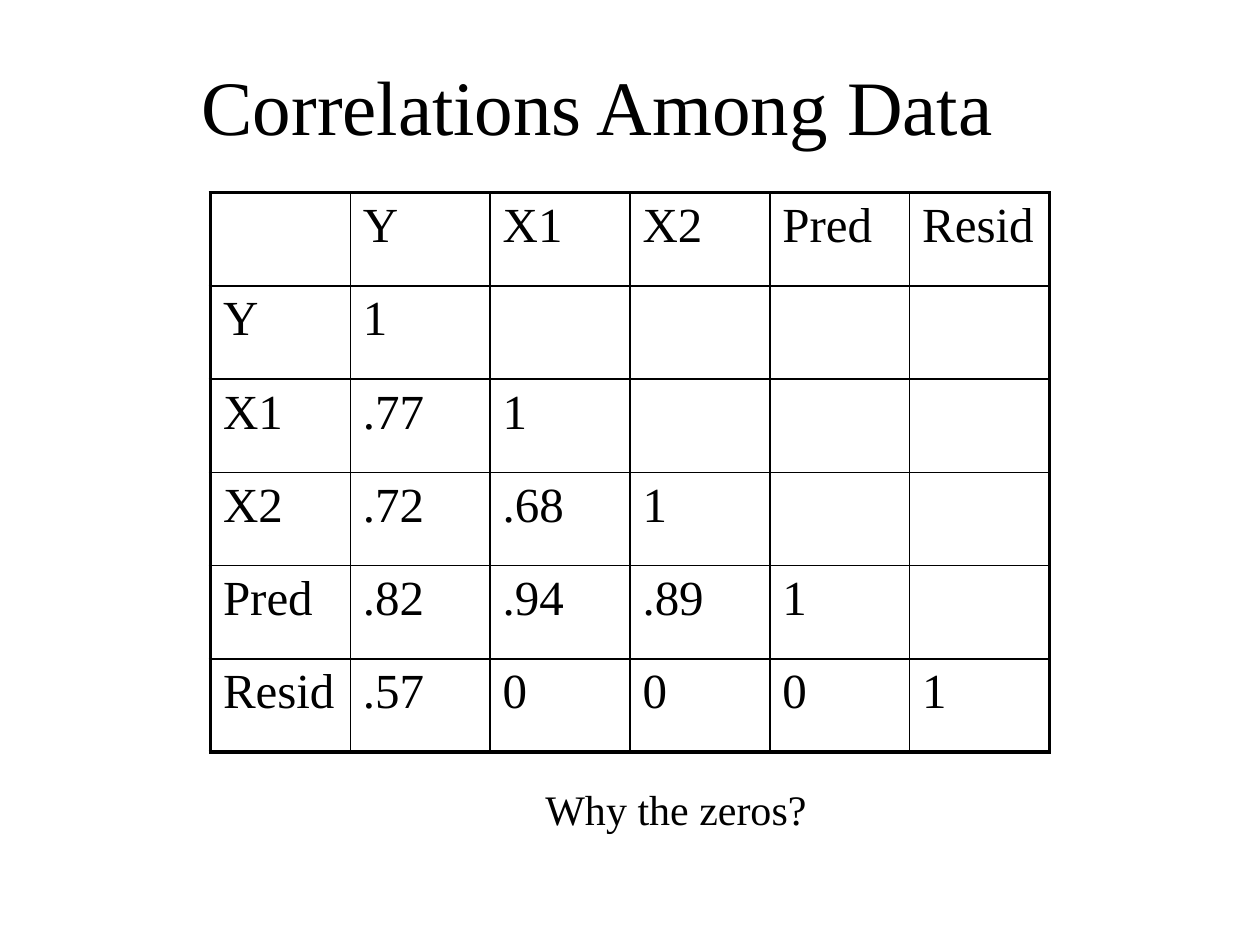
from lxml.etree import SubElement
from pptx import Presentation
from pptx.dml.color import RGBColor
from pptx.enum.text import MSO_ANCHOR, MSO_AUTO_SIZE, PP_ALIGN
from pptx.oxml.ns import qn
from pptx.util import Inches, Pt

# Content
TITLE = "Correlations Among Data"
CAPTION = "Why the zeros?"
VARIABLES = ["Y", "X1", "X2", "Pred", "Resid"]
CORRELATIONS = [  # lower triangle
    ["1"],
    [".77", "1"],
    [".72", ".68", "1"],
    [".82", ".94", ".89", "1"],
    [".57", "0", "0", "0", "1"],
]

FONT, BLACK = "Times New Roman", "000000"
INNER, OUTER = 1, 2.25  # border widths in points
COL_W, ROW_H = 1.11, 0.74


def write(tf, text, size):
    tf.text = text
    p = tf.paragraphs[0]
    p.alignment = PP_ALIGN.LEFT
    for r in p.runs:
        r.font.name, r.font.size = FONT, Pt(size)
        r.font.color.rgb = RGBColor.from_string(BLACK)


def set_border(cell, side, width):
    ln = SubElement(cell._tc.get_or_add_tcPr(), qn(f"a:ln{side}"), w=str(Pt(width)))
    fill = SubElement(ln, qn("a:solidFill"))
    SubElement(fill, qn("a:srgbClr"), val=BLACK)


prs = Presentation()
prs.slide_width, prs.slide_height = Inches(10), Inches(7.5)
s = prs.slides.add_slide(prs.slide_layouts[5])

# Title
title = s.shapes.title
title.left, title.top = Inches(1.5), Inches(0.33)
title.width, title.height = Inches(7.75), Inches(1)
title.text_frame.vertical_anchor = MSO_ANCHOR.MIDDLE
write(title.text_frame, TITLE, 44)

# Correlation table
rows = [[""] + VARIABLES]
rows += [[name] + values for name, values in zip(VARIABLES, CORRELATIONS)]
n = len(rows)
table = s.shapes.add_table(n, n, Inches(1.67), Inches(1.53),
                           Inches(n * COL_W), Inches(n * ROW_H)).table
table.first_row = table.horz_banding = False
for col in table.columns:
    col.width = Inches(COL_W)
for row in table.rows:
    row.height = Inches(ROW_H)

for i in range(n):
    for j in range(n):
        cell = table.cell(i, j)
        if j < len(rows[i]) and rows[i][j]:
            write(cell.text_frame, rows[i][j], 28)
        on_edge = {"L": j == 0, "R": j == n - 1, "T": i == 0, "B": i == n - 1}
        for side, outer in on_edge.items():
            set_border(cell, side, OUTER if outer else INNER)
        cell.fill.background()

# Caption
caption = s.shapes.add_textbox(Inches(4.23), Inches(6.17), Inches(2.29), Inches(0.51))
tf = caption.text_frame
tf.word_wrap = False
tf.auto_size = MSO_AUTO_SIZE.SHAPE_TO_FIT_TEXT
write(tf, CAPTION, 24)

prs.save("out.pptx")
